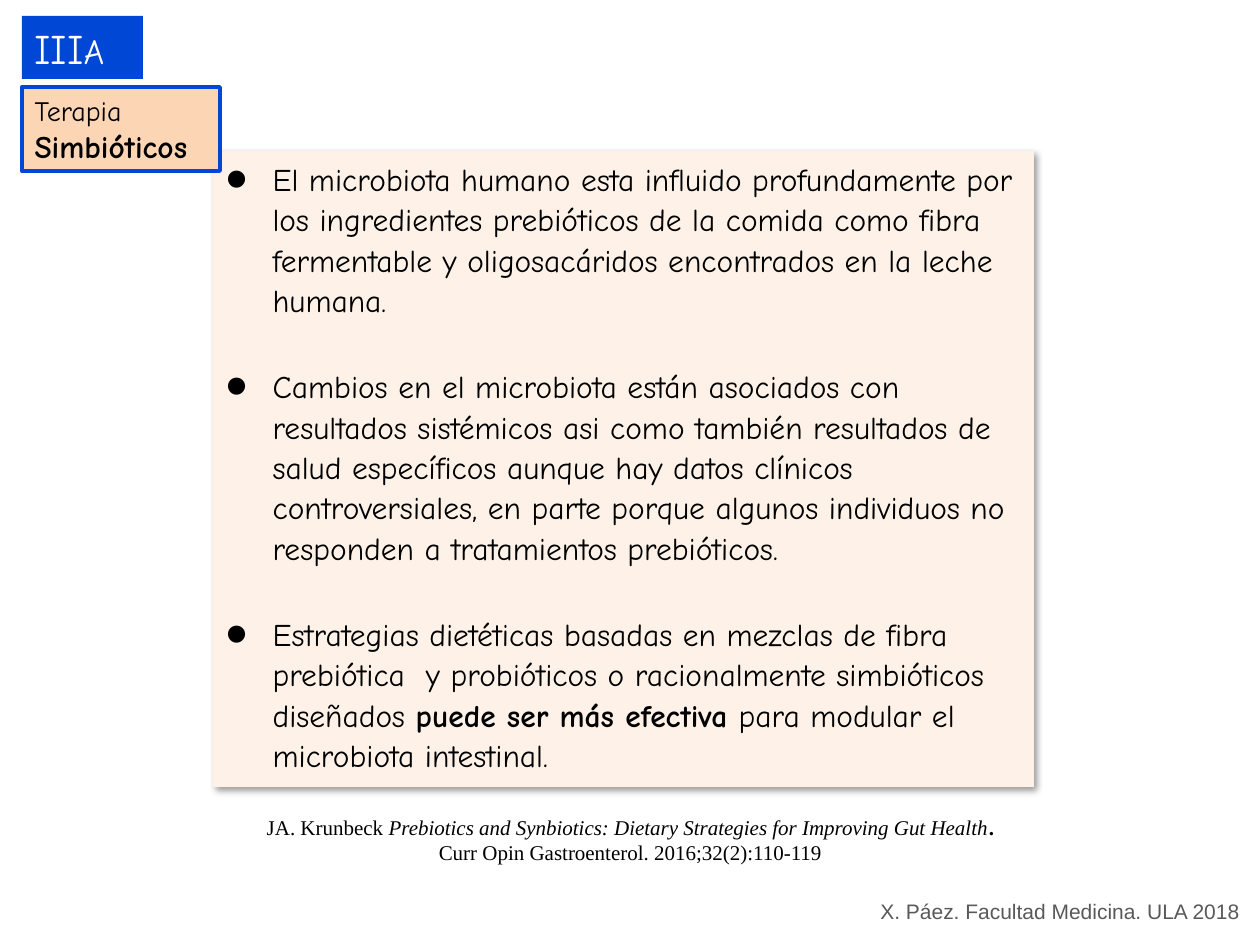
from lxml.etree import SubElement
from pptx import Presentation
from pptx.dml.color import RGBColor
from pptx.enum.text import MSO_ANCHOR as Anchor, MSO_AUTO_SIZE as AutoSize, PP_ALIGN as Align
from pptx.oxml.ns import qn
from pptx.util import Emu, Pt

BLACK = RGBColor(0, 0, 0)
WHITE = RGBColor(255, 255, 255)
GREY = RGBColor(0x59, 0x59, 0x59)
BLUE = RGBColor(0x00, 0x47, 0xD6)
PEACH = RGBColor(0xFC, 0xD5, 0xB5)
CREAM = RGBColor(0xFE, 0xF2, 0xE8)

PX_PER_INCH = 126
COMIC, TIMES, ARIAL = "Comic Neue", "Times New Roman", "Arial"

FINDINGS = [
    [("El microbiota humano esta influido profundamente por los ingredientes prebióticos "
      "de la comida como fibra fermentable y oligosacáridos encontrados en la leche humana.", False)],
    [("Cambios en el microbiota están asociados con resultados sistémicos asi como también "
      "resultados de salud específicos aunque hay datos clínicos controversiales, en parte "
      "porque algunos individuos no responden a tratamientos prebióticos.", False)],
    [("Estrategias dietéticas basadas en mezclas de fibra prebiótica  y probióticos o "
      "racionalmente simbióticos diseñados ", False),
     ("puede ser más efectiva ", True),
     ("para modular el microbiota intestinal.", False)],
]


def px(length):
    """Turn pixels into EMU."""
    return Emu(round(length * 914400 / PX_PER_INCH))


def place(shape, box):
    """Move and size a shape to a pixel box."""
    shape.left, shape.top, shape.width, shape.height = map(px, box)


def prepare_frame(shape, wrap=True):
    """Return the text frame of a shape, anchored at the top with fixed size."""
    frame = shape.text_frame
    frame.word_wrap = wrap
    frame.auto_size = AutoSize.NONE
    frame.vertical_anchor = Anchor.TOP
    return frame


def next_paragraph(frame, index, align=Align.LEFT):
    """Return the paragraph at an index, adding it when it is not the first."""
    paragraph = frame.add_paragraph() if index else frame.paragraphs[0]
    paragraph.alignment = align
    paragraph.space_before = Pt(0)
    return paragraph


def add_run(paragraph, text, name, size, color=BLACK, bold=False, italic=False):
    """Append one formatted run."""
    run = paragraph.add_run()
    run.text = text
    font = run.font
    font.name, font.size, font.bold, font.italic = name, Pt(size), bold, italic
    font.color.rgb = color


def paint(shape, fill, line=None):
    """Give a shape a solid fill and an optional outline."""
    shape.shadow.inherit = False
    shape.fill.solid()
    shape.fill.fore_color.rgb = fill
    if line is None:
        shape.line.fill.background()
    else:
        shape.line.color.rgb = line
        shape.line.width = Pt(2.25)


def add_soft_shadow(shape):
    """Cast a soft shadow down and to the right."""
    effects = shape._element.spPr.find(qn("a:effectLst"))
    shadow = SubElement(effects, qn("a:outerShdw"), blurRad=str(Pt(4)), dist=str(Pt(3)),
                        dir="2700000", algn="tl", rotWithShape="0")
    color = SubElement(shadow, qn("a:srgbClr"), val="000000")
    SubElement(color, qn("a:alpha"), val="40000")


def add_bullet(paragraph, indent):
    """Give a paragraph a large round bullet with a hanging indent."""
    properties = paragraph._p.get_or_add_pPr()
    properties.set("marL", str(indent))
    properties.set("indent", str(-indent))
    SubElement(properties, qn("a:buSzPct"), val="200000")
    SubElement(properties, qn("a:buFont"), typeface=ARIAL)
    SubElement(properties, qn("a:buChar"), char="•")


def fill_findings(body, box):
    """Lay out the bulleted findings panel."""
    place(body, box)
    paint(body, CREAM)
    add_soft_shadow(body)
    frame = prepare_frame(body)
    for index, runs in enumerate(FINDINGS):
        paragraph = next_paragraph(frame, index)
        paragraph.line_spacing = 1.07
        paragraph.space_before = Pt(26 if index else 0)
        paragraph.space_after = Pt(0)
        add_bullet(paragraph, px(47))
        for text, bold in runs:
            add_run(paragraph, text, COMIC, 18, bold=bold)


def fill_title(title, box):
    """Lay out the topic label."""
    place(title, box)
    paint(title, PEACH, BLUE)
    frame = prepare_frame(title)
    for index, (text, size, bold) in enumerate([("Terapia", 16, False), ("Simbióticos", 18, True)]):
        paragraph = next_paragraph(frame, index)
        paragraph.line_spacing = 1.0
        add_run(paragraph, text, COMIC, size, bold=bold)


def add_section_tag(slide, box):
    """Add the blue section number."""
    tag = slide.shapes.add_textbox(*map(px, box))
    paint(tag, BLUE)
    paragraph = next_paragraph(prepare_frame(tag), 0)
    add_run(paragraph, "III", COMIC, 24, WHITE)
    add_run(paragraph, "A", COMIC, 20, WHITE)


def add_citation(slide, box):
    """Add the centred reference below the panel."""
    frame = prepare_frame(slide.shapes.add_textbox(*map(px, box)), wrap=False)
    work = next_paragraph(frame, 0, Align.CENTER)
    add_run(work, "JA. Krunbeck ", TIMES, 12)
    add_run(work, "Prebiotics and Synbiotics: Dietary Strategies for Improving Gut Health",
            TIMES, 12, italic=True)
    add_run(work, ".", TIMES, 12, bold=True)
    journal = next_paragraph(frame, 1, Align.CENTER)
    add_run(journal, "Curr Opin Gastroenterol. 2016;32(2):110-119", TIMES, 12)


def add_credit(slide, box):
    """Add the author line at the bottom right."""
    frame = prepare_frame(slide.shapes.add_textbox(*map(px, box)), wrap=False)
    add_run(next_paragraph(frame, 0), "X. Páez. Facultad Medicina. ULA 2018", ARIAL, 12, GREY)


def main():
    """Build and save the slide."""
    presentation = Presentation()
    presentation.slide_width, presentation.slide_height = px(1260), px(945)
    slide = presentation.slides.add_slide(presentation.slide_layouts[1])
    title, body = slide.shapes.title, slide.placeholders[1]
    title._element.addprevious(body._element)
    fill_findings(body, (213, 151, 821, 636))
    fill_title(title, (22, 87, 198, 84))
    add_section_tag(slide, (22, 16, 121, 63))
    add_citation(slide, (253, 808, 755, 63))
    add_credit(slide, (868, 892, 388, 38))
    presentation.save("out.pptx")


if __name__ == "__main__":
    main()
